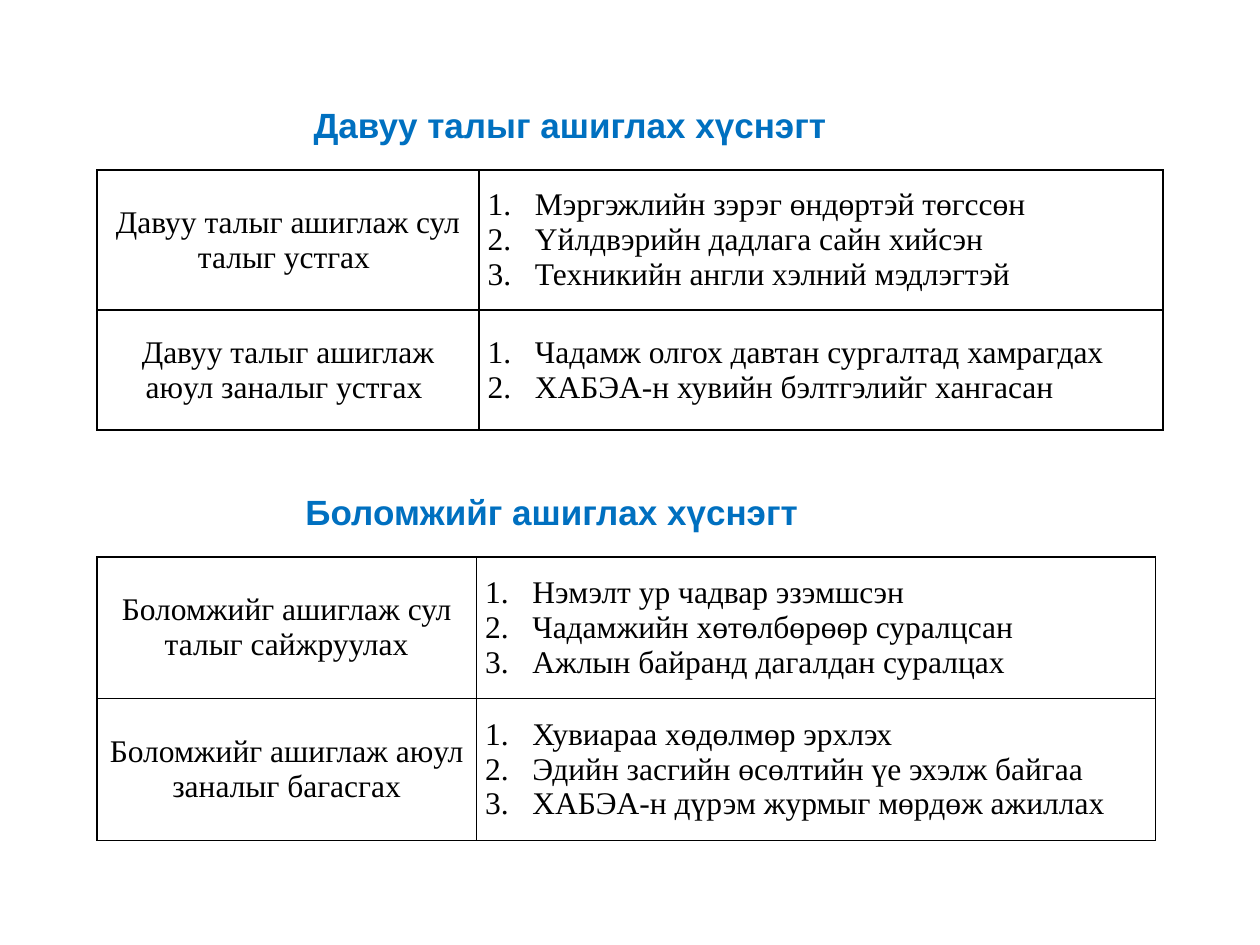
from pptx import Presentation
from pptx.dml.color import RGBColor
from pptx.enum.text import MSO_ANCHOR, MSO_AUTO_SIZE, PP_ALIGN
from pptx.oxml.xmlchemy import OxmlElement
from pptx.util import Pt

MIDDLE = MSO_ANCHOR.MIDDLE
GROW = MSO_AUTO_SIZE.SHAPE_TO_FIT_TEXT
LEFT, CENTER, JUSTIFY = PP_ALIGN.LEFT, PP_ALIGN.CENTER, PP_ALIGN.JUSTIFY

BLUE, BLACK = "0070C0", "000000"
HEAD = {"name": "Arial", "size": Pt(20), "bold": True}
BODY = {"name": "Times New Roman", "size": Pt(18), "bold": False}
CELL = {"vertical_anchor": MIDDLE, "margin_left": Pt(5), "margin_right": Pt(5),
        "margin_top": 0, "margin_bottom": 0}
HANG = Pt(27)

# Each row: label, numbered points
STRONG = [
    ("Давуу талыг ашиглаж сул талыг устгах ",
     ["Мэргэжлийн зэрэг өндөртэй төгссөн",
      "Үйлдвэрийн дадлага сайн хийсэн",
      "Техникийн англи хэлний мэдлэгтэй"]),
    ("Давуу талыг ашиглаж аюул заналыг устгах ",
     ["Чадамж олгох давтан сургалтад хамрагдах",
      "ХАБЭА-н хувийн бэлтгэлийг хангасан"]),
]
CHANCE = [
    ("Боломжийг ашиглаж сул талыг сайжруулах",
     ["Нэмэлт ур чадвар эзэмшсэн",
      "Чадамжийн хөтөлбөрөөр суралцсан",
      "Ажлын байранд дагалдан суралцах"]),
    ("Боломжийг ашиглаж аюул заналыг багасгах",
     ["Хувиараа хөдөлмөр эрхлэх",
      "Эдийн засгийн өсөлтийн үе эхэлж байгаа",
      "ХАБЭА-н дүрэм журмыг мөрдөж ажиллах"]),
]


def rgb(code):
    return RGBColor.from_string(code)


def apply(item, style):
    for key, value in style.items():
        setattr(item, key, value)


def write(para, text, style, color, align):
    para.alignment = align
    run = para.add_run()
    run.text = text
    apply(run.font, style)
    run.font.color.rgb = rgb(color)


def number(para):
    props = para._p.get_or_add_pPr()
    props.set("marL", str(HANG))
    props.set("indent", str(-HANG))
    mark = OxmlElement("a:buAutoNum")
    mark.set("type", "arabicPeriod")
    props.append(mark)


def border(cell):
    props = cell._tc.get_or_add_tcPr()
    for spot, side in enumerate(("lnL", "lnR", "lnT", "lnB")):
        line = OxmlElement("a:" + side)
        line.set("w", str(Pt(1)))
        fill = OxmlElement("a:solidFill")
        tint = OxmlElement("a:srgbClr")
        tint.set("val", BLACK)
        fill.append(tint)
        line.append(fill)
        props.insert(spot, line)


def add_title(slide, box, text, align, indent=0):
    frame = slide.shapes.add_textbox(*map(Pt, box)).text_frame
    apply(frame, {"word_wrap": False, "auto_size": GROW})
    para = frame.paragraphs[0]
    write(para, text, HEAD, BLUE, align)
    para._p.get_or_add_pPr().set("indent", str(Pt(indent)))


def add_grid(slide, left, top, widths, heights, rows):
    size = (left, top, sum(widths), sum(heights))
    table = slide.shapes.add_table(len(rows), 2, *map(Pt, size)).table
    apply(table, {"first_row": False, "horz_banding": False})
    for col, width in zip(table.columns, widths):
        col.width = Pt(width)
    for row, height, (label, points) in zip(table.rows, heights, rows):
        row.height = Pt(height)
        name, facts = row.cells
        for cell in (name, facts):
            apply(cell, CELL)
            cell.fill.background()
            border(cell)
        # Label on the left, numbered list on the right
        write(name.text_frame.paragraphs[0], label, BODY, BLACK, CENTER)
        frame = facts.text_frame
        for spot, point in enumerate(points):
            para = frame.add_paragraph() if spot else frame.paragraphs[0]
            write(para, point, BODY, BLACK, JUSTIFY)
            number(para)


def main():
    deck = Presentation()
    apply(deck, {"slide_width": Pt(720), "slide_height": Pt(540)})
    slide = deck.slides.add_slide(deck.slide_layouts[6])
    # Strengths
    add_title(slide, (131.8, 55.5, 350.6, 31.5),
              "Давуу талыг ашиглах хүснэгт", LEFT, 40.3)
    add_grid(slide, 55.5, 97.2, (218.2, 391), (80, 68.4), STRONG)
    # Opportunities
    add_title(slide, (166.3, 276.5, 298, 31.5),
              "Боломжийг ашиглах хүснэгт", CENTER)
    add_grid(slide, 55.5, 318.2, (216.7, 388), (81, 81), CHANCE)
    deck.save("out.pptx")


if __name__ == "__main__":
    main()
